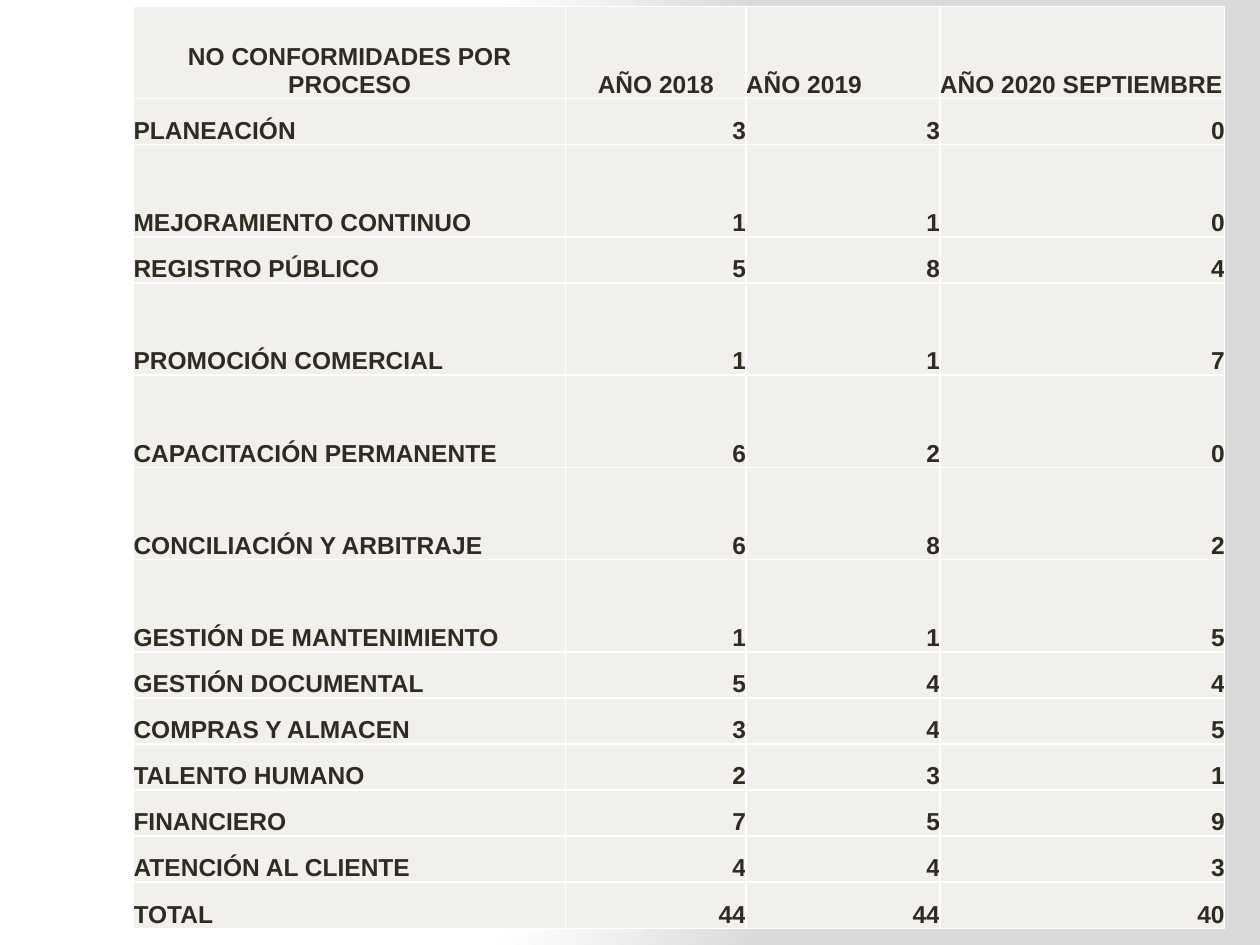
from dataclasses import dataclass

from pptx import Presentation
from pptx.dml.color import RGBColor
from pptx.enum.text import MSO_ANCHOR, PP_ALIGN
from pptx.oxml import parse_xml
from pptx.oxml.ns import nsdecls
from pptx.util import Inches, Pt


@dataclass(frozen=True)
class Theme:
    font: str = "Arial"
    size: int = 14
    ink: str = "2F2B20"
    cell: str = "F1F0EC"
    border: str = "FFFFFF"
    border_width: int = 1
    backdrop: tuple = ((0, "FFFFFF"), (75, "FFFFFF"), (100, "DADADA"))


THEME = Theme()
LEFT, TOP = 1.06, 0.05
COLUMN_WIDTHS = (3.43, 1.43, 1.54, 2.26)
ROW_UNIT = 7.32 / 20

HEADER = ("NO CONFORMIDADES POR PROCESO", "AÑO 2018", "AÑO 2019", "AÑO 2020 SEPTIEMBRE")
HEADER_ALIGNMENT = (PP_ALIGN.CENTER, PP_ALIGN.CENTER, PP_ALIGN.LEFT, PP_ALIGN.LEFT)
BODY_ALIGNMENT = (PP_ALIGN.LEFT,) + (PP_ALIGN.RIGHT,) * 3

# Each row: height in row units, then its cells.
ROWS = (
    (2, HEADER),
    (1, ("PLANEACIÓN", 3, 3, 0)),
    (2, ("MEJORAMIENTO CONTINUO", 1, 1, 0)),
    (1, ("REGISTRO PÚBLICO", 5, 8, 4)),
    (2, ("PROMOCIÓN COMERCIAL", 1, 1, 7)),
    (2, ("CAPACITACIÓN PERMANENTE", 6, 2, 0)),
    (2, ("CONCILIACIÓN Y ARBITRAJE", 6, 8, 2)),
    (2, ("GESTIÓN DE MANTENIMIENTO", 1, 1, 5)),
    (1, ("GESTIÓN DOCUMENTAL", 5, 4, 4)),
    (1, ("COMPRAS Y ALMACEN", 3, 4, 5)),
    (1, ("TALENTO HUMANO", 2, 3, 1)),
    (1, ("FINANCIERO", 7, 5, 9)),
    (1, ("ATENCIÓN AL CLIENTE", 4, 4, 3)),
    (1, ("TOTAL", 44, 44, 40)),
)


def set_backdrop(page):
    """Give the page a radial gradient centred towards the left."""
    stops = "".join(
        f'<a:gs pos="{position * 1000}"><a:srgbClr val="{color}"/></a:gs>'
        for position, color in THEME.backdrop
    )
    page.element.cSld.insert(0, parse_xml(
        f'<p:bg {nsdecls("p", "a")}><p:bgPr><a:gradFill rotWithShape="1">'
        f'<a:gsLst>{stops}</a:gsLst><a:path path="circle">'
        '<a:fillToRect l="20000" t="50000" r="100000" b="50000"/></a:path>'
        '</a:gradFill><a:effectLst/></p:bgPr></p:bg>'
    ))


def set_borders(cell):
    properties = cell._tc.get_or_add_tcPr()
    for index, side in enumerate(("lnL", "lnR", "lnT", "lnB")):
        properties.insert(index, parse_xml(
            f'<a:{side} {nsdecls("a")} w="{Pt(THEME.border_width)}"><a:solidFill>'
            f'<a:srgbClr val="{THEME.border}"/></a:solidFill></a:{side}>'
        ))


def fill_cell(cell, text, alignment):
    cell.fill.solid()
    cell.fill.fore_color.rgb = RGBColor.from_string(THEME.cell)
    cell.margin_left = cell.margin_right = cell.margin_top = cell.margin_bottom = 0
    cell.vertical_anchor = MSO_ANCHOR.BOTTOM
    set_borders(cell)
    cell.text_frame.text = str(text)
    para = cell.text_frame.paragraphs[0]
    para.alignment = alignment
    font = para.runs[0].font
    font.name, font.size, font.bold = THEME.font, Pt(THEME.size), True
    font.color.rgb = RGBColor.from_string(THEME.ink)


def add_process_table(page):
    height = ROW_UNIT * sum(units for units, _ in ROWS)
    table = page.shapes.add_table(
        len(ROWS), len(COLUMN_WIDTHS), Inches(LEFT), Inches(TOP),
        Inches(sum(COLUMN_WIDTHS)), Inches(height),
    ).table
    table.horz_banding = False
    for column, width in zip(table.columns, COLUMN_WIDTHS):
        column.width = Inches(width)
    for row, (units, texts) in zip(table.rows, ROWS):
        row.height = Inches(units * ROW_UNIT)
        alignments = HEADER_ALIGNMENT if texts is HEADER else BODY_ALIGNMENT
        for cell, text, alignment in zip(row.cells, texts, alignments):
            fill_cell(cell, text, alignment)


def main():
    deck = Presentation()
    deck.slide_width, deck.slide_height = Inches(10), Inches(7.5)
    page = deck.slides.add_slide(deck.slide_layouts.get_by_name("Blank"))
    set_backdrop(page)
    add_process_table(page)
    deck.save("out.pptx")


if __name__ == "__main__":
    main()
